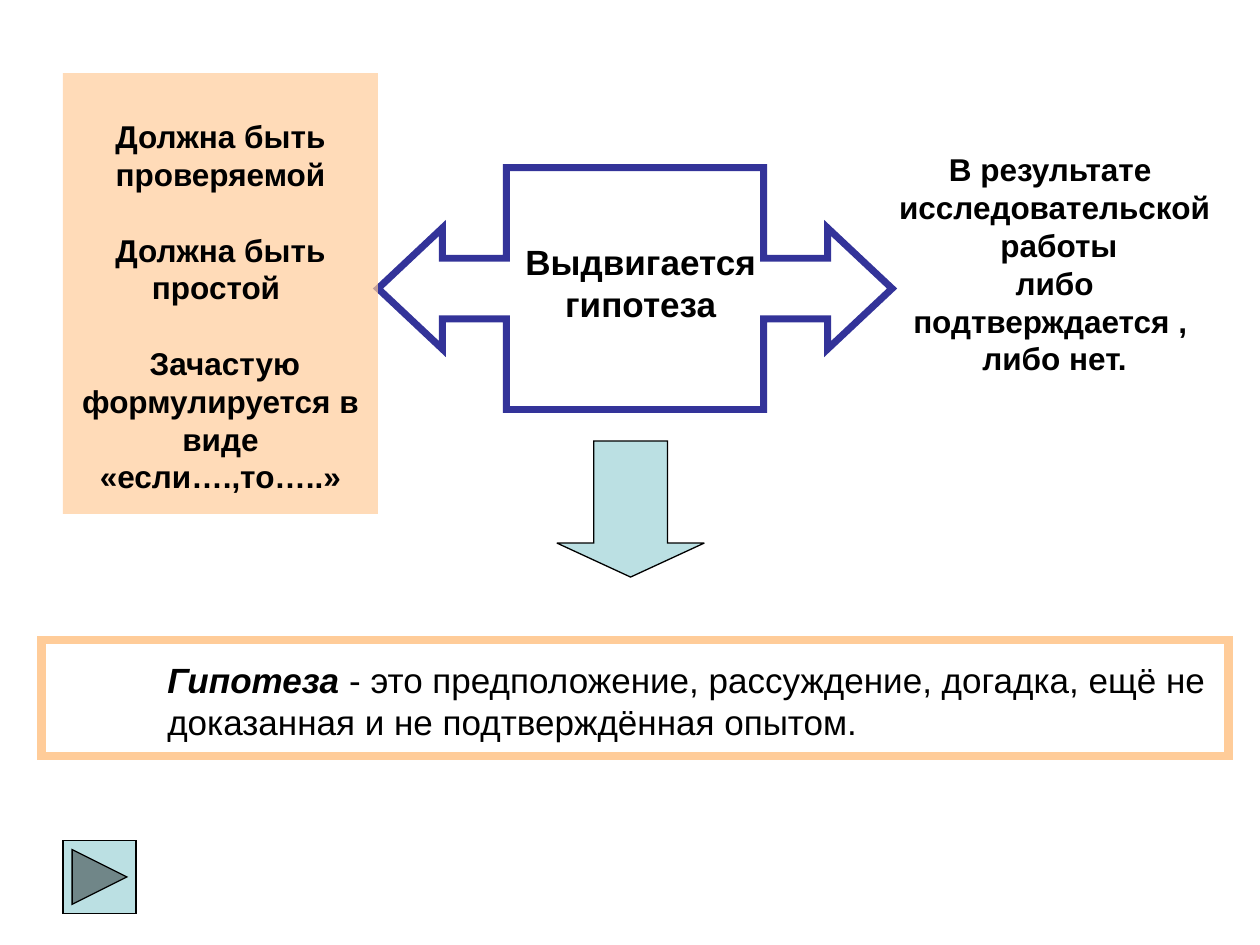
import pptx
import pptx.dml.color
import pptx.enum.shapes
import pptx.enum.text
import pptx.oxml
import pptx.oxml.ns
import pptx.util

Inches, Pt = pptx.util.Inches, pptx.util.Pt
RGB = pptx.dml.color.RGBColor
SHAPE = pptx.enum.shapes.MSO_SHAPE
ANCHOR = pptx.enum.text.MSO_ANCHOR
ALIGN = pptx.enum.text.PP_ALIGN

BLACK = RGB(0x00, 0x00, 0x00)
INDIGO = RGB(0x33, 0x33, 0x99)
PEACH = RGB(0xFF, 0xCC, 0x99)
AQUA = RGB(0xBB, 0xE0, 0xE3)

FONT = "Arial"
TITLE = ["Выдвигается гипотеза"]
REQUIREMENTS = [
    "Должна быть проверяемой",
    "Должна быть простой ",
    " Зачастую формулируется в виде «если….,то…..»",
]
OUTCOME = [
    "В результате ",
    "исследовательской",
    " работы",
    " либо ",
    "подтверждается , ",
    "либо нет.",
]
TERM = "Гипотеза"
DEFINITION = [
    " - это предположение, рассуждение, догадка, ещё не",
    "доказанная и не подтверждённая опытом.",
]


def drawing_element(tag, attributes):
    return pptx.oxml.parse_xml(
        f'<a:{tag} {pptx.oxml.ns.nsdecls("a")} {attributes}/>')


def add_figure(slide, preset, box, fill=None, line=None, width=0.75, adjustments=()):
    figure = slide.shapes.add_shape(preset, *map(Inches, box))
    figure.shadow.inherit = False
    for i, value in enumerate(adjustments):
        figure.adjustments[i] = value
    if fill is None:
        figure.fill.background()
    else:
        figure.fill.solid()
        figure.fill.fore_color.rgb = fill
    if line is None:
        figure.line.fill.background()
    else:
        figure.line.color.rgb = line
        figure.line.width = Pt(width)
        outline = figure.element.spPr.find(pptx.oxml.ns.qn("a:ln"))
        outline.append(drawing_element("miter", 'lim="800000"'))
    return figure


def set_opacity(figure, percent):
    color = figure.element.spPr.find(".//" + pptx.oxml.ns.qn("a:srgbClr"))
    color.append(drawing_element("alpha", f'val="{percent * 1000}"'))


def write(frame, lines, size, align=ALIGN.CENTER, bold=True,
          anchor=ANCHOR.MIDDLE, gap=0):
    """Put one paragraph per line; gap is the space in points between them."""
    frame.word_wrap = True
    frame.vertical_anchor = anchor
    for i, line in enumerate(lines):
        paragraph = frame.paragraphs[0] if i == 0 else frame.add_paragraph()
        paragraph.add_run().text = line
        paragraph.alignment = align
        paragraph.space_before = Pt(gap if i else 0)
        font = paragraph.font
        font.name, font.size, font.bold = FONT, Pt(size), bold
        font.color.rgb = BLACK


def add_text(slide, box, lines, size, **style):
    frame = slide.shapes.add_textbox(*map(Inches, box)).text_frame
    write(frame, lines, size, **style)
    return frame


def main():
    deck = pptx.Presentation()
    deck.slide_width, deck.slide_height = Inches(10), Inches(7.5)
    slide = deck.slides.add_slide(deck.slide_layouts[6])

    add_text(slide, (3.92, 1.58, 2.33, 1.33), TITLE, 20)
    add_figure(slide, SHAPE.LEFT_RIGHT_ARROW_CALLOUT, (3, 1.33, 4.08, 1.92),
               line=INDIGO, width=4, adjustments=(0.25, 0.25, 0.266, 0.5))

    requirements = add_figure(slide, SHAPE.RECTANGLE, (0.5, 0.58, 2.5, 3.5), fill=PEACH)
    set_opacity(requirements, 69)
    requirements.text_frame.margin_top = Inches(0.35)
    write(requirements.text_frame, REQUIREMENTS, 18, anchor=ANCHOR.TOP, gap=21.6)

    add_figure(slide, SHAPE.RECTANGLE, (0.33, 5.08, 9.42, 0.92), line=PEACH, width=4.75)
    add_figure(slide, SHAPE.DOWN_ARROW, (4.42, 3.5, 1.17, 1.08), fill=AQUA,
               line=BLACK, adjustments=(0.5, 0.25))

    outcome = add_text(slide, (7.07, 1.08, 2.6, 2.33), OUTCOME, 18)
    outcome.margin_left = outcome.margin_right = 0
    outcome.margin_bottom = Inches(0.35)

    definition = add_text(slide, (1.23, 5.18, 8.57, 0.77), DEFINITION, 20,
                          align=ALIGN.LEFT, bold=False, anchor=ANCHOR.TOP)
    opening = definition.paragraphs[0]
    opening.runs[0].text = TERM
    opening.runs[0].font.bold = opening.runs[0].font.italic = True
    opening.add_run().text = DEFINITION[0]

    add_figure(slide, SHAPE.ACTION_BUTTON_FORWARD_OR_NEXT, (0.5, 6.67, 0.58, 0.58),
               fill=AQUA, line=BLACK)
    deck.save("out.pptx")


if __name__ == "__main__":
    main()
